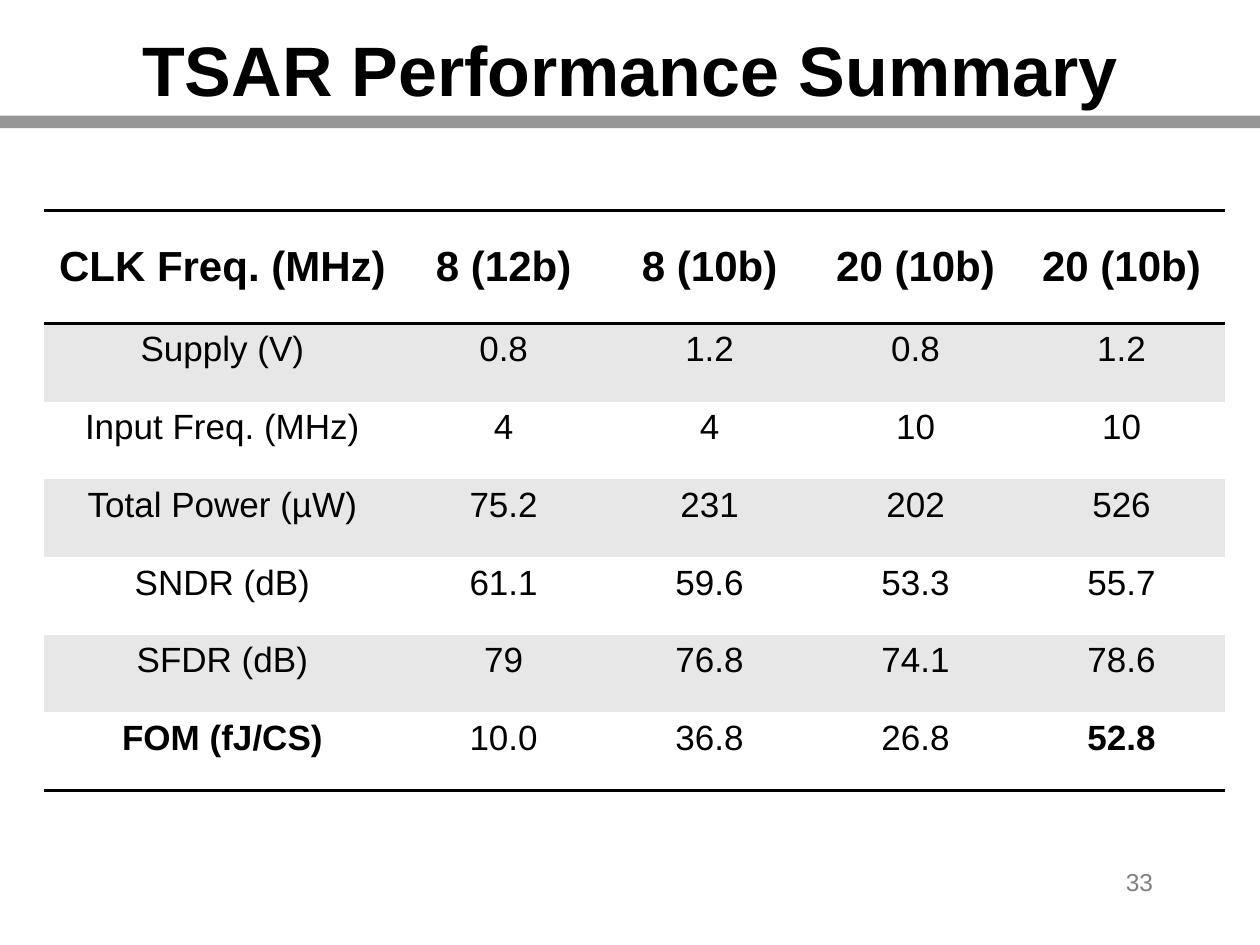
from lxml.etree import SubElement
from pptx import Presentation
from pptx.dml.color import RGBColor
from pptx.enum.shapes import MSO_SHAPE
from pptx.enum.text import MSO_ANCHOR, MSO_AUTO_SIZE, PP_ALIGN
from pptx.oxml.ns import qn
from pptx.util import Inches, Pt

COLORS = {
    "ink": "000000",
    "rule": "969696",
    "page": "808080",
    "band": "E7E7E7",
    "paper": "FFFFFF",
}
FONT = "Arial"
SLIDE_WIDTH, SLIDE_HEIGHT = 10, 7.5
LABEL_WIDTH, VALUE_WIDTH = 2.83, 1.635
HEADER_HEIGHT, ROW_HEIGHT = 0.9, 0.617
RESULTS = [
    ["CLK Freq. (MHz)", "8 (12b)", "8 (10b)", "20 (10b)", "20 (10b)"],
    ["Supply (V)", "0.8", "1.2", "0.8", "1.2"],
    ["Input Freq. (MHz)", "4", "4", "10", "10"],
    ["Total Power (µW)", "75.2", "231", "202", "526"],
    ["SNDR (dB)", "61.1", "59.6", "53.3", "55.7"],
    ["SFDR (dB)", "79", "76.8", "74.1", "78.6"],
    ["FOM (fJ/CS)", "10.0", "36.8", "26.8", "52.8"],
]
RULED_EDGES = {0, 1, len(RESULTS)}
HIGHLIGHTS = {"FOM (fJ/CS)", "52.8"}


def color(name):
    """Return the named colour."""
    return RGBColor.from_string(COLORS[name])


def write(frame, text, size, ink="ink", bold=False, align=PP_ALIGN.CENTER):
    """Put one formatted paragraph in a text frame."""
    paragraph = frame.paragraphs[0]
    paragraph.alignment = align
    run = paragraph.add_run()
    run.text = text
    run.font.name = FONT
    run.font.size = Pt(size)
    run.font.bold = bold
    run.font.color.rgb = color(ink)


def add_heading(slide, left, top, width, height):
    """Place the title and the grey bar beneath it."""
    bar = slide.shapes.add_shape(
        MSO_SHAPE.RECTANGLE, left, top + int(height * 0.95), width, Inches(0.1))
    bar.shadow.inherit = False
    bar.fill.solid()
    bar.fill.fore_color.rgb = color("rule")
    bar.line.fill.background()
    title = slide.shapes.title
    title.left, title.top, title.width, title.height = left, top, width, height
    frame = title.text_frame
    frame.auto_size = MSO_AUTO_SIZE.NONE
    frame.vertical_anchor = MSO_ANCHOR.MIDDLE
    write(frame, "TSAR Performance Summary", 40, bold=True)


def set_borders(cell, row):
    """Rule the cell's top and bottom where the table calls for it."""
    properties = cell._tc.get_or_add_tcPr()
    edges = {"L": False, "R": False,
             "T": row in RULED_EDGES, "B": row + 1 in RULED_EDGES}
    for side, ruled in edges.items():
        border = SubElement(properties, qn(f"a:ln{side}"), w=str(Pt(2)))
        if ruled:
            fill = SubElement(border, qn("a:solidFill"))
            SubElement(fill, qn("a:srgbClr"), val=COLORS["ink"])
        else:
            SubElement(border, qn("a:noFill"))


def add_results(slide, left, top, width, height):
    """Place the banded table of measured results."""
    table = slide.shapes.add_table(
        len(RESULTS), len(RESULTS[0]), left, top, width, height).table
    for index, column in enumerate(table.columns):
        column.width = Inches(VALUE_WIDTH if index else LABEL_WIDTH)
    for row, values in enumerate(RESULTS):
        header = row == 0
        table.rows[row].height = Inches(HEADER_HEIGHT if header else ROW_HEIGHT)
        for column, value in enumerate(values):
            cell = table.cell(row, column)
            set_borders(cell, row)
            cell.fill.solid()
            cell.fill.fore_color.rgb = color("band" if row % 2 else "paper")
            cell.vertical_anchor = MSO_ANCHOR.MIDDLE if header else MSO_ANCHOR.TOP
            write(cell.text_frame, value, 24 if header else 20,
                  bold=header or value in HIGHLIGHTS)


def add_page_number(slide, left, top, width, height):
    """Place the page number at the lower right."""
    frame = slide.shapes.add_textbox(left, top, width, height).text_frame
    frame.word_wrap = True
    write(frame, "33", 14, ink="page", align=PP_ALIGN.RIGHT)


def main():
    """Build the performance summary slide."""
    deck = Presentation()
    deck.slide_width, deck.slide_height = Inches(SLIDE_WIDTH), Inches(SLIDE_HEIGHT)
    slide = deck.slides.add_slide(deck.slide_layouts[5])
    add_heading(slide, 0, Inches(0.13), deck.slide_width, Inches(0.83))
    add_results(slide, Inches(0.35), Inches(1.67), Inches(9.37), Inches(4.6))
    add_page_number(slide, Inches(7.17), Inches(6.83), Inches(2.08), Inches(0.5))
    deck.save("out.pptx")


if __name__ == "__main__":
    main()
